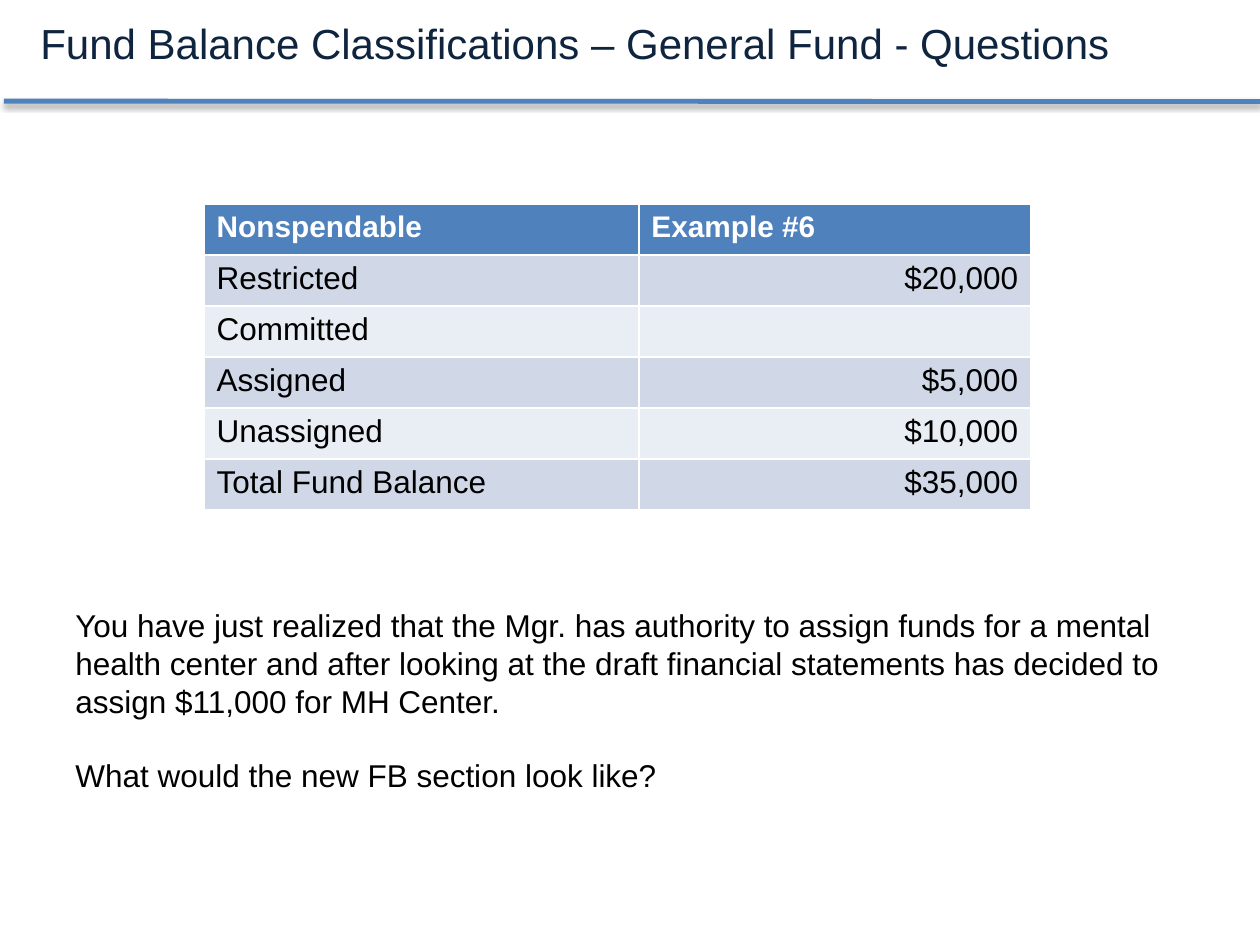
from lxml.etree import SubElement
from pptx import Presentation
from pptx.dml.color import RGBColor as Color
from pptx.enum.shapes import MSO_CONNECTOR as Connector
from pptx.enum.text import MSO_ANCHOR as Anchor, PP_ALIGN as Align
from pptx.oxml.ns import qn
from pptx.util import Inches, Pt

COLORS = {
    "title": "0F243E",
    "accent": "4F81BD",
    "white": "FFFFFF",
    "text": "000000",
    "band_dark": "D0D8E8",
    "band_light": "E9EDF4",
}
FONT = "Arial"
TITLE_ONLY = 5


class SlideBuilder:
    def __init__(self, presentation):
        self.width = presentation.slide_width
        self.height = presentation.slide_height
        self.slide = presentation.slides.add_slide(presentation.slide_layouts[TITLE_ONLY])

    def x(self, share):
        return round(self.width * share / 100)

    def y(self, share):
        return round(self.height * share / 100)

    def box(self, left, top, width, height):
        return self.x(left), self.y(top), self.x(width), self.y(height)

    def add_text_run(self, paragraph, text, size, color, bold=False, align=Align.LEFT):
        paragraph.alignment = align
        run = paragraph.add_run()
        run.text = text
        run.font.name = FONT
        run.font.size = Pt(size)
        run.font.bold = bold
        run.font.color.rgb = Color.from_string(COLORS[color])

    def title(self, text, area):
        shape = self.slide.shapes.title
        shape.left, shape.top, shape.width, shape.height = self.box(*area)
        shape.text_frame.vertical_anchor = Anchor.TOP
        self.add_text_run(shape.text_frame.paragraphs[0], text, 24, "title")

    def rule(self, start, end):
        line = self.slide.shapes.add_connector(
            Connector.STRAIGHT, self.x(start[0]), self.y(start[1]), self.x(end[0]), self.y(end[1])
        )
        line.line.color.rgb = Color.from_string(COLORS["accent"])
        line.line.width = Pt(2.75)
        effects = SubElement(line._element.spPr, qn("a:effectLst"))
        shadow = SubElement(
            effects, qn("a:outerShdw"), blurRad=str(Pt(3.1)), dist=str(Pt(1.6)),
            dir="5400000", rotWithShape="0",
        )
        tint = SubElement(shadow, qn("a:srgbClr"), val=COLORS["text"])
        SubElement(tint, qn("a:alpha"), val="38000")

    def text(self, paragraphs, area, gap):
        frame = self.slide.shapes.add_textbox(*self.box(*area)).text_frame
        frame.word_wrap = True
        for index, text in enumerate(paragraphs):
            paragraph = frame.add_paragraph() if index else frame.paragraphs[0]
            if index:
                paragraph.space_before = Pt(gap)
            self.add_text_run(paragraph, text, 18, "text")

    def table(self, rows, area, columns):
        table = self.slide.shapes.add_table(len(rows), len(columns), *self.box(*area)).table
        for column, share in zip(table.columns, columns):
            column.width = self.x(share)
        for row_index, row in enumerate(rows):
            header = row_index == 0
            fill = "accent" if header else ("band_light", "band_dark")[row_index % 2]
            for column_index, text in enumerate(row):
                cell = table.cell(row_index, column_index)
                cell.fill.solid()
                cell.fill.fore_color.rgb = Color.from_string(COLORS[fill])
                if not text:
                    continue
                paragraph = cell.text_frame.paragraphs[0]
                if header:
                    self.add_text_run(paragraph, text, 17, "white", bold=True)
                else:
                    align = Align.RIGHT if column_index else Align.LEFT
                    self.add_text_run(paragraph, text, 18, "text", align=align)


def main():
    presentation = Presentation()
    presentation.slide_width = Inches(10)
    presentation.slide_height = Inches(7.5)
    builder = SlideBuilder(presentation)
    builder.rule((0.3, 10.7), (100, 10.75))
    builder.title("Fund Balance Classifications – General Fund - Questions", (2.2, 1.2, 90, 6.7))
    builder.text(
        [
            "You have just realized that the Mgr. has authority to assign funds for a mental "
            "health center and after looking at the draft financial statements has decided to "
            "assign $11,000 for MH Center.",
            "What would the new FB section look like?",
        ],
        (5, 63.5, 90, 21.6),
        gap=21,
    )
    builder.table(
        [
            ("Nonspendable", "Example #6"),
            ("Restricted", "$20,000"),
            ("Committed", ""),
            ("Assigned", "$5,000"),
            ("Unassigned", "$10,000"),
            ("Total Fund Balance", "$35,000"),
        ],
        (16.2, 21.6, 65.6, 32.4),
        columns=(34.5, 31.1),
    )
    presentation.save("out.pptx")


if __name__ == "__main__":
    main()
